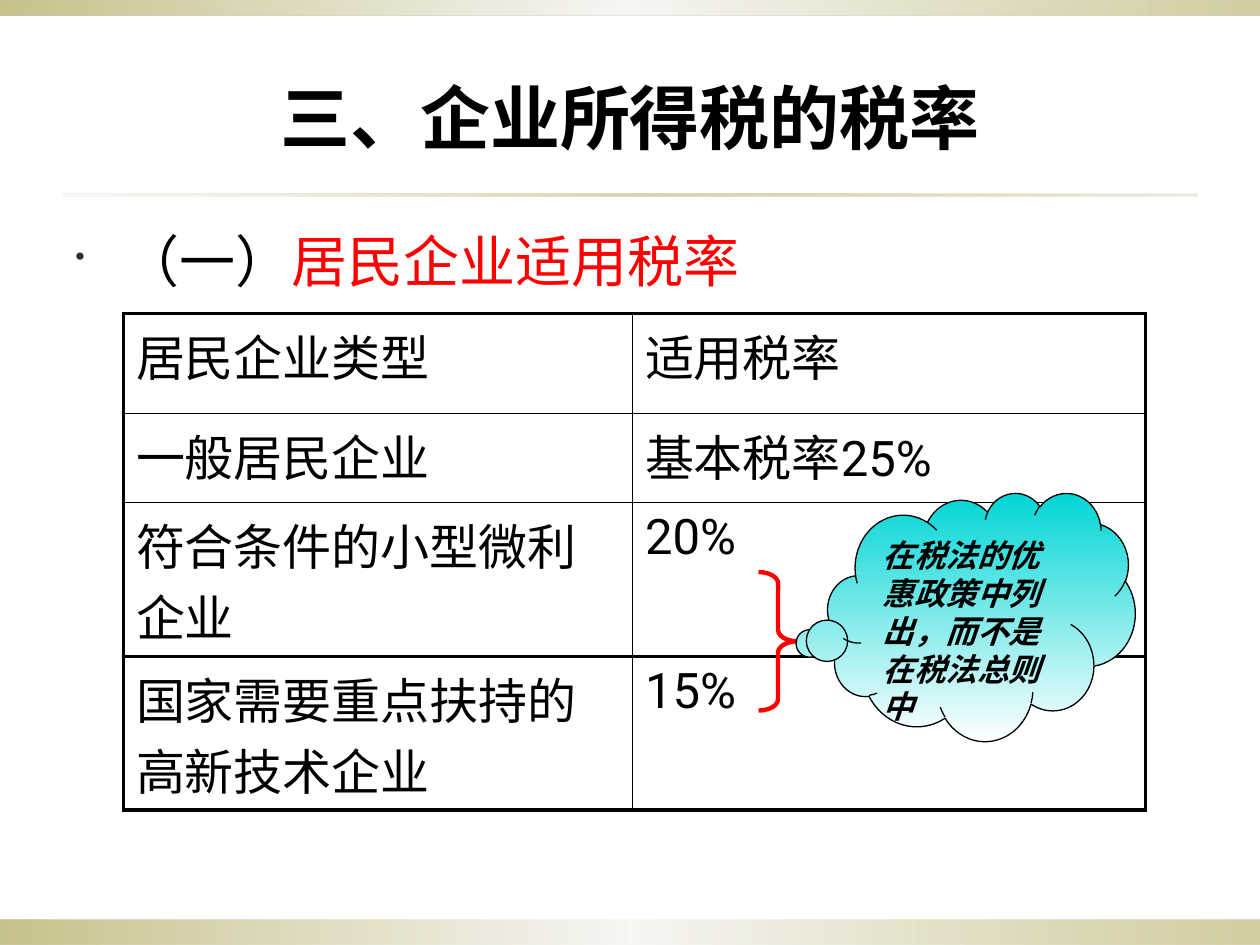
import pptx
import pptx.util
import pptx.oxml
import pptx.oxml.ns
import pptx.dml.color
import pptx.enum.shapes
import pptx.enum.text
from lxml import etree

Inches, Pt = pptx.util.Inches, pptx.util.Pt
qn = pptx.oxml.ns.qn
Shape = pptx.enum.shapes.MSO_SHAPE
Align = pptx.enum.text.PP_ALIGN
Anchor = pptx.enum.text.MSO_ANCHOR

COLORS = {"black": "000000", "red": "FF0000", "dot": "2F2F2F", "olive": "918415",
          "pale": "EEEDE7", "sand": "DCD9CC", "aqua": "00D5D5", "white": "FFFFFF"}
FONTS = {"title": "Noto Sans CJK SC", "body": "Roboto", "note": "Arial"}


class Deck:
    """Hold the style and the current slide, and draw each kind of element."""

    def __init__(self, slide):
        self.slide = slide

    def rgb(self, name):
        return pptx.dml.color.RGBColor.from_string(COLORS[name])

    def style(self, run, font, size, color="black", bold=False, italic=False):
        run.font.name = FONTS[font]
        run.font.size = Pt(size)
        run.font.bold, run.font.italic = bold, italic
        run.font.color.rgb = self.rgb(color)

    def solid(self, parent, name, alpha=100):
        node = etree.SubElement(parent, qn("a:srgbClr"), val=COLORS[name])
        if alpha < 100:
            etree.SubElement(node, qn("a:alpha"), val=str(alpha * 1000))

    def shade(self, shape, stops, angle=0):
        shape.fill.gradient()
        grad = shape.element.spPr.find(qn("a:gradFill"))
        for child in list(grad):
            grad.remove(child)
        group = etree.SubElement(grad, qn("a:gsLst"))
        for pos, name, alpha in stops:
            stop = etree.SubElement(group, qn("a:gs"), pos=str(pos * 1000))
            self.solid(stop, name, alpha)
        etree.SubElement(grad, qn("a:lin"), ang=str(angle * 60000), scaled="0")

    def shape(self, kind, box, line=None, width=1, adjust=()):
        item = self.slide.shapes.add_shape(kind, *map(Inches, box))
        item.shadow.inherit = False
        item.fill.background()
        if line:
            item.line.color.rgb = self.rgb(line)
            item.line.width = Pt(width)
        else:
            item.line.fill.background()
        for i, value in enumerate(adjust):
            item.adjustments[i] = value
        return item

    def band(self, box, stops):
        self.shade(self.shape(Shape.RECTANGLE, box), stops)

    def text(self, box, anchor=Anchor.TOP):
        frame = self.slide.shapes.add_textbox(*map(Inches, box)).text_frame
        frame.word_wrap = True
        frame.vertical_anchor = anchor
        return frame.paragraphs[0]

    def title(self, box, words):
        para = self.text(box, Anchor.MIDDLE)
        para.text = words
        para.alignment = Align.CENTER
        self.style(para.runs[0], "title", 40, bold=True)

    def bullet(self, box, parts):
        para = self.text(box)
        props = para._p.get_or_add_pPr()
        props.set("marL", str(Inches(0.38)))
        props.set("indent", str(-Inches(0.38)))
        self.solid(etree.SubElement(props, qn("a:buClr")), "dot")
        etree.SubElement(props, qn("a:buSzPct"), val="50000")
        etree.SubElement(props, qn("a:buChar"), char="•")
        for words, color in parts:
            run = para.add_run()
            run.text = words
            self.style(run, "body", 32, color)

    def border(self, cell, edges):
        props = cell._tc.get_or_add_tcPr()
        for i, (side, thick) in enumerate(edges.items()):
            width = Pt(2.25 if thick else 1)
            line = etree.Element(qn("a:ln" + side), w=str(width))
            self.solid(etree.SubElement(line, qn("a:solidFill")), "black")
            props.insert(i, line)

    def table(self, spot, widths, heights, rows, heavy):
        size = len(rows), len(widths)
        box = *spot, sum(widths), sum(heights)
        grid = self.slide.shapes.add_table(*size, *map(Inches, box)).table
        grid.first_row = grid.horz_banding = False
        for col, width in zip(grid.columns, widths):
            col.width = Inches(width)
        for row, height in zip(grid.rows, heights):
            row.height = Inches(height)
        for r, row in enumerate(rows):
            for c, words in enumerate(row):
                cell = grid.cell(r, c)
                cell.text_frame.text = words
                self.style(cell.text_frame.paragraphs[0].runs[0], "body", 28)
                cell.fill.background()
                self.border(cell, {"L": c == 0, "R": c == size[1] - 1,
                                   "T": r in heavy, "B": r + 1 in heavy})

    def cloud(self, box, adjust, words):
        item = self.shape(Shape.CLOUD_CALLOUT, box, "black", 0.75, adjust)
        self.shade(item, [(0, "aqua", 100), (100, "white", 100)], 90)
        frame = item.text_frame
        frame.text = words
        frame.word_wrap = True
        frame.vertical_anchor = Anchor.TOP
        para = frame.paragraphs[0]
        para.alignment = Align.LEFT
        self.style(para.runs[0], "note", 18, bold=True, italic=True)


def main():
    show = pptx.Presentation()
    show.slide_width, show.slide_height = Inches(10), Inches(7.5)
    deck = Deck(show.slides.add_slide(show.slide_layouts[6]))

    edge = [(0, "olive", 50), (50, "pale", 45), (100, "olive", 40)]
    deck.band((0, 7.3, 10, 0.2), edge)
    deck.band((0, 0, 10, 0.12), edge)
    deck.band((0.5, 1.54, 9, 0.02),
              [(0, "sand", 20), (50, "olive", 35), (100, "sand", 50)])

    deck.title((0.5, 0.3, 9, 1.25), "三、企业所得税的税率")
    deck.bullet((0.5, 1.75, 9, 5.12),
                [("（一）", "black"), ("居民企业适用税率", "red")])
    rows = [("居民企业类型", "适用税率"),
            ("一般居民企业", "基本税率25%"),
            ("符合条件的小型微利企业", "20%"),
            ("国家需要重点扶持的高新技术企业", "15%")]
    deck.table((0.98, 2.49), (4.04, 4.07), (0.79, 0.71, 1.22, 1.22),
               rows, heavy=(0, 3, 4))
    deck.shape(Shape.RIGHT_BRACE, (6.02, 4.54, 0.31, 1.1), "red", 2.5, (0.29, 0.5))
    deck.cloud((6.57, 3.91, 2.44, 1.97), (-0.57, 0.11),
               "在税法的优惠政策中列出，而不是在税法总则中")
    show.save("out.pptx")


if __name__ == "__main__":
    main()
